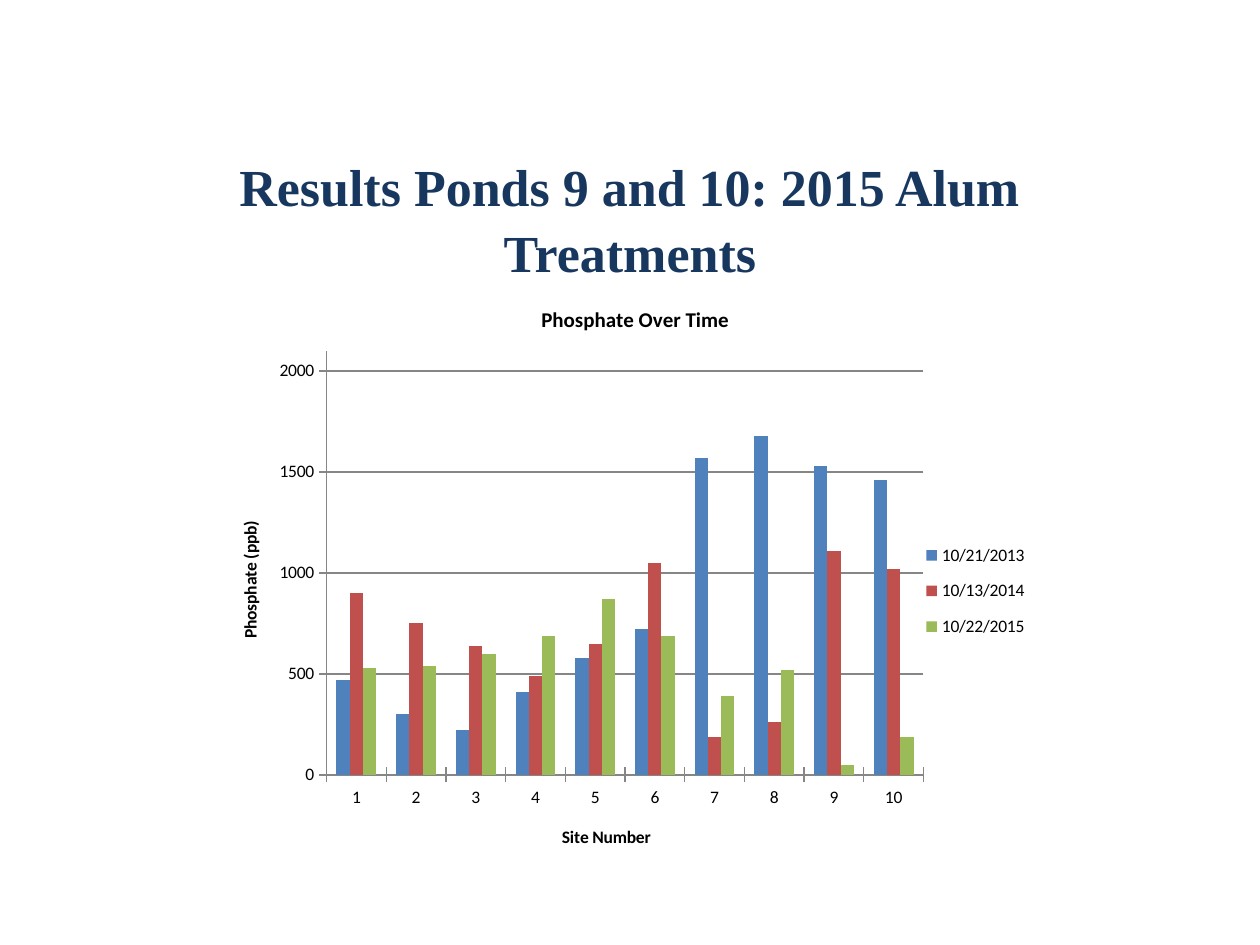
from lxml.etree import SubElement
from pptx import Presentation
from pptx.chart.data import CategoryChartData
from pptx.dml.color import RGBColor
from pptx.enum.chart import XL_CHART_TYPE, XL_LEGEND_POSITION, XL_TICK_MARK
from pptx.enum.text import MSO_ANCHOR, PP_ALIGN
from pptx.oxml.ns import qn
from pptx.util import Inches, Pt

NAVY = RGBColor(0x17, 0x37, 0x5E)
BLACK = RGBColor(0, 0, 0)
GRAY = RGBColor(0x86, 0x86, 0x86)
BLUE = RGBColor(0x4F, 0x81, 0xBD)
RED = RGBColor(0xC0, 0x50, 0x4D)
GREEN = RGBColor(0x9B, 0xBB, 0x59)

ROWS = [
    ("10/21/2013", BLUE, (470, 300, 220, 410, 580, 720, 1570, 1680, 1530, 1460)),
    ("10/13/2014", RED, (900, 750, 640, 490, 650, 1050, 190, 260, 1110, 1020)),
    ("10/22/2015", GREEN, (530, 540, 600, 690, 870, 690, 390, 520, 50, 190)),
]


def style(item, form):
    for key, value in form.items():
        setattr(item, key, value)


def place(node, index, **spots):
    for old in node.findall(qn("c:layout")):
        node.remove(old)
    box = SubElement(node, qn("c:layout"))
    node.insert(index, box)
    grid = SubElement(box, qn("c:manualLayout"))
    if "inner" in spots:
        SubElement(grid, qn("c:layoutTarget")).set("val", spots.pop("inner"))
    for key in "xy":
        SubElement(grid, qn(f"c:{key}Mode")).set("val", "edge")
    for key, value in spots.items():
        SubElement(grid, qn(f"c:{key}")).set("val", str(value))


deck = Presentation()
style(deck, {"slide_width": Inches(10), "slide_height": Inches(7.5)})
wide, high = deck.slide_width, deck.slide_height
slide = deck.slides.add_slide(deck.slide_layouts[5])

title = slide.shapes.title
style(title, {"left": int(wide * 0.075), "top": int(high * 0.18),
              "width": int(wide * 0.85), "height": int(high * 0.1)})
frame = title.text_frame
frame.text = "Results Ponds 9 and 10: 2015 Alum Treatments"
style(frame, {"word_wrap": True, "vertical_anchor": MSO_ANCHOR.MIDDLE,
              "margin_left": Inches(0.2), "margin_right": Inches(0.2)})
line = frame.paragraphs[0]
style(line, {"alignment": PP_ALIGN.CENTER, "line_spacing": 1.05})
font = line.runs[0].font
style(font, {"name": "Times New Roman", "size": Pt(29.7), "bold": True})
font.color.rgb = NAVY

data = CategoryChartData()
data.categories = [str(site) for site in range(1, 11)]
for name, color, values in ROWS:
    data.add_series(name, values)
chart = slide.shapes.add_chart(
    XL_CHART_TYPE.COLUMN_CLUSTERED, int(wide / 6), int(high * 0.3),
    int(wide * 0.675), int(high * 0.62), data).chart
style(chart.font, {"name": "Calibri", "size": Pt(10)})
chart.font.color.rgb = BLACK

plot = chart.plots[0]
style(plot, {"gap_width": 150, "overlap": 0, "vary_by_categories": False})
for bars, (name, color, values) in zip(plot.series, ROWS):
    bars.fill = bars.format.fill
    bars.fill.solid()
    bars.fill.fore_color.rgb = color

cats, vals = chart.category_axis, chart.value_axis
style(vals, {"minimum_scale": 0, "maximum_scale": 2100, "major_unit": 500,
             "has_major_gridlines": True})
for axis in (cats, vals):
    style(axis, {"major_tick_mark": XL_TICK_MARK.CROSS,
                 "minor_tick_mark": XL_TICK_MARK.NONE})
for part in (cats, vals, vals.major_gridlines):
    part.format.line.color.rgb = GRAY
    part.format.line.width = Pt(0.75)

for part, text, size in ((chart, "Phosphate Over Time", 12),
                         (cats, "Site Number", 10),
                         (vals, "Phosphate (ppb)", 10)):
    head = part.chart_title if part is chart else part.axis_title
    head.text_frame.text = text
    font = head.text_frame.paragraphs[0].runs[0].font
    style(font, {"name": "Calibri", "size": Pt(size), "bold": True})
    font.color.rgb = BLACK

chart.has_legend = True
key = chart.legend
style(key, {"position": XL_LEGEND_POSITION.RIGHT, "include_in_layout": False})

area = chart.element.find(".//" + qn("c:plotArea"))
place(area, 0, inner="inner", x=0.137, y=0.115, w=0.702, h=0.724)
place(chart.element.find(".//" + qn("c:legend")), 1, x=0.83, y=0.42, w=0.14, h=0.21)
place(cats.axis_title.element if hasattr(cats.axis_title, "element")
      else area.find(qn("c:catAx")).find(qn("c:title")), 1, x=0.41, y=0.92)
place(area.find(qn("c:valAx")).find(qn("c:title")), 1, x=0.03, y=0.4)

deck.save("out.pptx")
